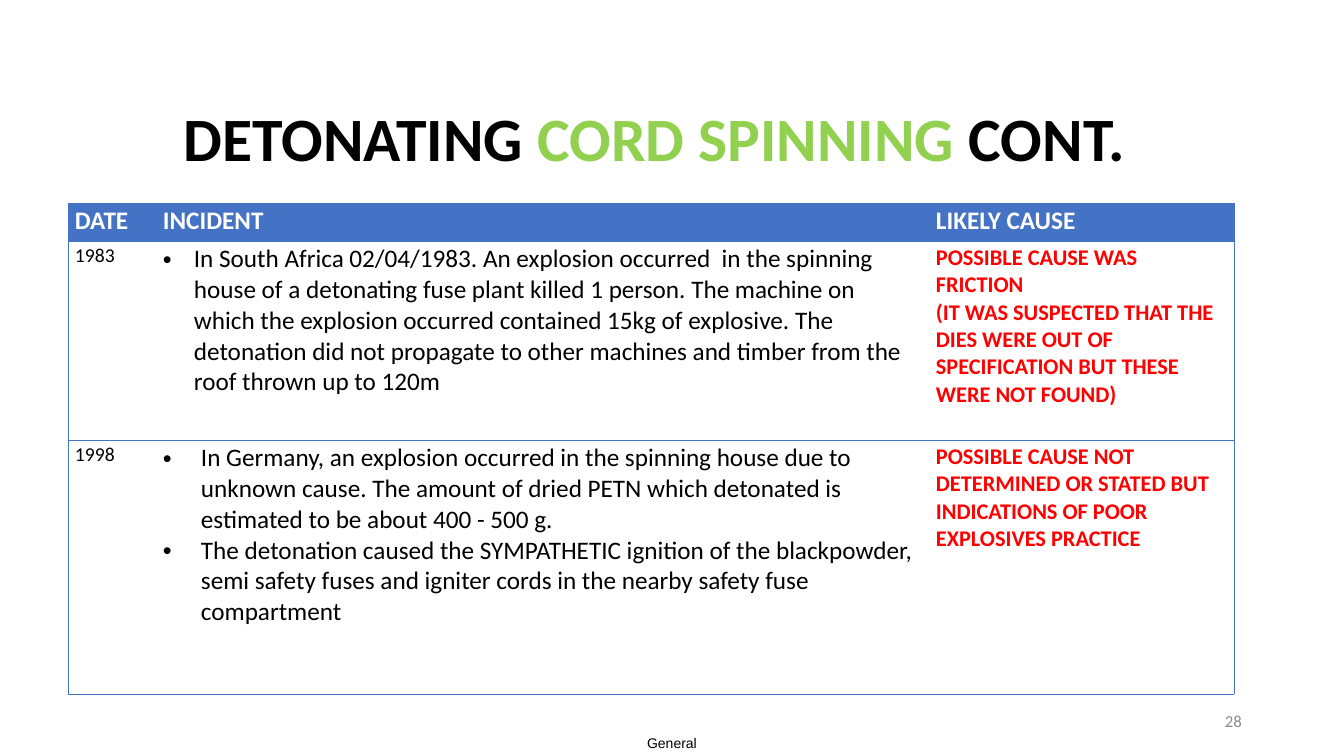
import pptx
import pptx.util
import pptx.dml.color
import pptx.enum.text
import pptx.oxml.ns
import lxml.etree

EMU_PER_PX = 12192000 / 1344
FONT = "Calibri"
BLACK, WHITE, RED, GREEN, BLUE, GRAY = "000000", "FFFFFF", "FF0000", "92D050", "4472C4", "8C8C8C"
NO_TABLE_STYLE = "{2D5ABB26-0587-4C30-8999-92F81FD0307C}"
ALIGN = pptx.enum.text.PP_ALIGN

TITLE = [("DETONATING ", BLACK), ("CORD SPINNING ", GREEN), ("CONT.", BLACK)]
HEADINGS = ["DATE", "INCIDENT", "LIKELY CAUSE"]
INCIDENTS = [
    {
        "date": ["1983"],
        "incident": [
            "In South Africa 02/04/1983. An explosion occurred  in the spinning house of a "
            "detonating fuse plant killed 1 person. The machine on which the explosion occurred "
            "contained 15kg of explosive. The detonation did not propagate to other machines and "
            "timber from the roof thrown up to 120m",
        ],
        "cause": [
            "POSSIBLE CAUSE WAS FRICTION",
            "(IT WAS SUSPECTED THAT THE DIES WERE OUT OF SPECIFICATION BUT THESE WERE NOT FOUND)",
        ],
        "indent": 31,
    },
    {
        "date": ["1998"],
        "incident": [
            "In Germany, an explosion occurred in the spinning house due to unknown cause. The "
            "amount of dried PETN which detonated is estimated to be about 400 - 500 g.",
            "The detonation caused the SYMPATHETIC ignition of the blackpowder, semi safety fuses "
            "and igniter cords in the nearby safety fuse compartment",
        ],
        "cause": ["POSSIBLE CAUSE NOT DETERMINED OR STATED BUT INDICATIONS OF POOR EXPLOSIVES PRACTICE"],
        "indent": 38,
    },
]
TITLE_BOX = (75, 59, 1159, 166)
TABLE_LEFT, TABLE_TOP = 68, 203
COLUMN_WIDTHS = [88, 773, 305]
ROW_HEIGHTS = [38, 199, 254]
LABELS = [
    ("28", (950, 701, 302, 40), 12, FONT, GRAY, ALIGN.RIGHT, 10),
    ("General", (632, 729, 80, 27), 10, "Arial", BLACK, ALIGN.CENTER, 0),
]


def px(length):
    return pptx.util.Emu(round(length * EMU_PER_PX))


def rgb(color):
    return pptx.dml.color.RGBColor.from_string(color)


def add_span(para, text, size, color, bold=False, font=FONT):
    span = para.add_run()
    span.text = text
    span.font.size = pptx.util.Pt(size)
    span.font.name = font
    span.font.bold = bold
    span.font.color.rgb = rgb(color)


def set_bullet(para, indent):
    properties = para._p.get_or_add_pPr()
    properties.set("marL", str(px(indent)))
    properties.set("indent", str(-px(indent)))
    for tag, key, value in [("a:buFont", "typeface", "Arial"), ("a:buChar", "char", "•")]:
        bullet = lxml.etree.SubElement(properties, pptx.oxml.ns.qn(tag))
        bullet.set(key, value)


def set_borders(cell, sides):
    """Draw thin blue lines on the given sides, named L, R, T and B in that order."""
    properties = cell._tc.get_or_add_tcPr()
    for position, side in enumerate(sides):
        line = lxml.etree.Element(pptx.oxml.ns.qn(f"a:ln{side}"), w=str(pptx.util.Pt(0.5)))
        fill = lxml.etree.SubElement(line, pptx.oxml.ns.qn("a:solidFill"))
        lxml.etree.SubElement(fill, pptx.oxml.ns.qn("a:srgbClr"), val=BLUE)
        properties.insert(position, line)


def fill_cell(cell, lines, size, color, bold=False, indent=0):
    cell.margin_left = cell.margin_right = px(7)
    cell.margin_top = cell.margin_bottom = px(3)
    for number, text in enumerate(lines):
        para = cell.text_frame.add_paragraph() if number else cell.text_frame.paragraphs[0]
        if indent:
            set_bullet(para, indent)
        add_span(para, text, size, color, bold)


def add_title(page):
    title = page.shapes.title
    title.left, title.top, title.width, title.height = map(px, TITLE_BOX)
    frame = title.text_frame
    frame.auto_size = pptx.enum.text.MSO_AUTO_SIZE.NONE
    frame.vertical_anchor = pptx.enum.text.MSO_ANCHOR.MIDDLE
    para = frame.paragraphs[0]
    para.alignment = ALIGN.CENTER
    para.line_spacing = 0.9
    for text, color in TITLE:
        add_span(para, text, 44, color, bold=True)


def add_incident_table(page):
    shape = page.shapes.add_table(
        len(ROW_HEIGHTS), len(COLUMN_WIDTHS), px(TABLE_LEFT), px(TABLE_TOP),
        px(sum(COLUMN_WIDTHS)), px(sum(ROW_HEIGHTS)))
    table = shape.table
    table.horz_banding = False
    table._tbl.tblPr.find(pptx.oxml.ns.qn("a:tableStyleId")).text = NO_TABLE_STYLE
    for column, width in zip(table.columns, COLUMN_WIDTHS):
        column.width = px(width)
    for row, height in zip(table.rows, ROW_HEIGHTS):
        row.height = px(height)

    for column, heading in enumerate(HEADINGS):
        fill_cell(table.cell(0, column), [heading], 18, WHITE, bold=True)
    for row, entry in enumerate(INCIDENTS, start=1):
        fill_cell(table.cell(row, 0), entry["date"], 14, BLACK)
        fill_cell(table.cell(row, 1), entry["incident"], 18, BLACK, indent=entry["indent"])
        fill_cell(table.cell(row, 2), entry["cause"], 16, RED, bold=True)

    last_column = len(COLUMN_WIDTHS) - 1
    for row in range(len(ROW_HEIGHTS)):
        for column in range(len(COLUMN_WIDTHS)):
            cell = table.cell(row, column)
            if row == 0:
                cell.fill.solid()
                cell.fill.fore_color.rgb = rgb(BLUE)
            else:
                cell.fill.background()
            outer = {0: "L", last_column: "R"}.get(column, "")
            set_borders(cell, outer + "TB")


def add_label(page, text, place, size, font, color, alignment, margin):
    frame = page.shapes.add_textbox(*map(px, place)).text_frame
    frame.word_wrap = True
    frame.vertical_anchor = pptx.enum.text.MSO_ANCHOR.MIDDLE
    frame.margin_left = frame.margin_right = px(margin)
    frame.margin_top = frame.margin_bottom = 0
    para = frame.paragraphs[0]
    para.alignment = alignment
    add_span(para, text, size, color, font=font)


def main():
    deck = pptx.Presentation()
    deck.slide_width, deck.slide_height = px(1344), px(756)
    page = deck.slides.add_slide(deck.slide_layouts.get_by_name("Title Only"))
    add_title(page)
    add_incident_table(page)
    for label in LABELS:
        add_label(page, *label)
    deck.save("out.pptx")


if __name__ == "__main__":
    main()
